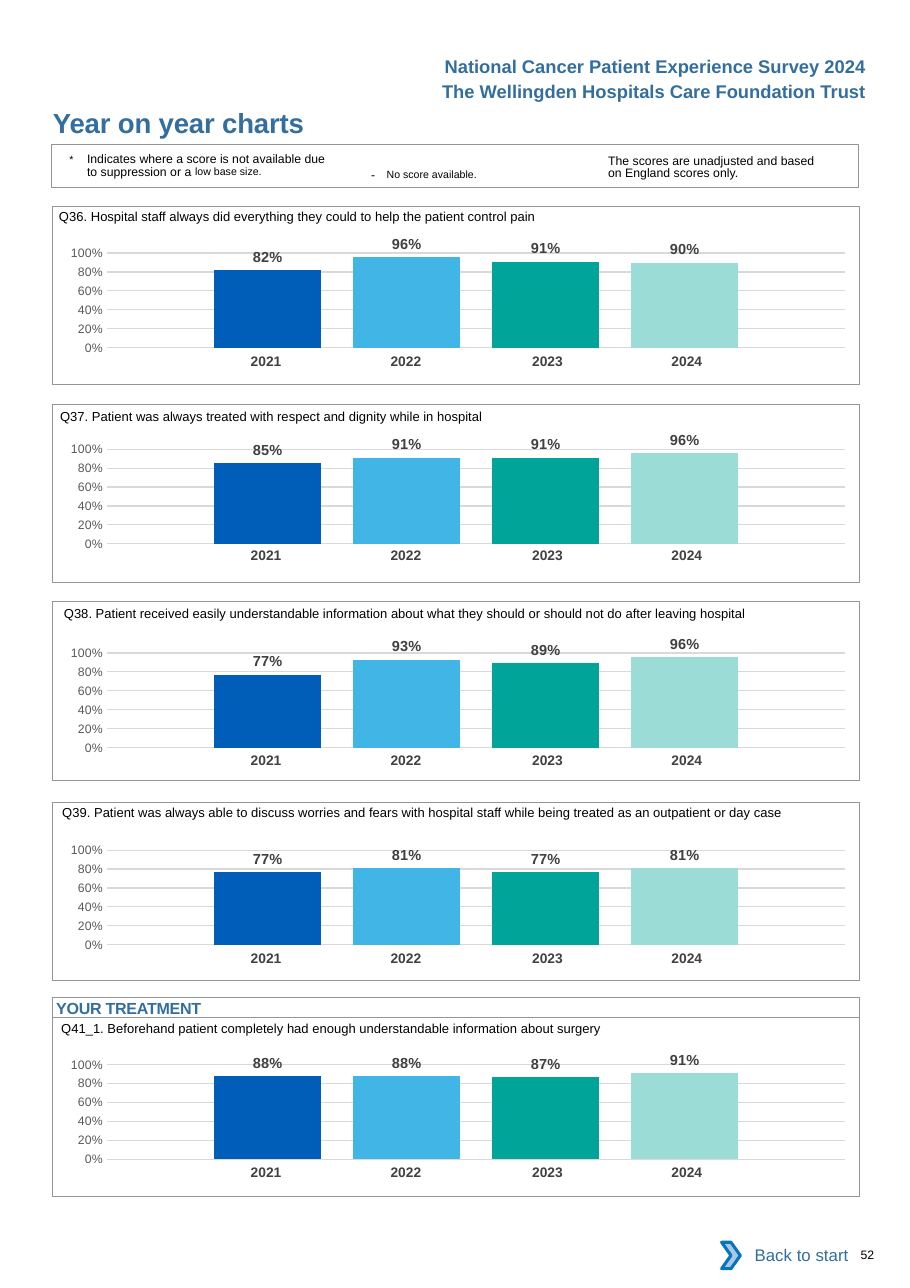
"""Build the year on year charts page of a patient survey report."""
from lxml import etree
from pptx import Presentation
from pptx import util as u
from pptx.chart.data import CategoryChartData
from pptx.dml.color import RGBColor
from pptx.enum import chart as charts, shapes, text
from pptx.oxml import parse_xml
from pptx.oxml.ns import nsdecls

WIDTH, HEIGHT = u.Inches(8.26), u.Inches(11.69)
COLOURS = {
    "heading": "336E9F", "ink": "000000", "frame": "939598", "year": "414042",
    "axis": "595959", "grid": "D9D9D9", "label": "404040", "paper": "FFFFFF",
    "chevron": "A8C7E9", "chevron_edge": "0A74BB",
}
YEARS = {"2021": "005EB8", "2022": "41B6E6", "2023": "00A499", "2024": "9CDCD7"}
YEAR_COLUMNS = (1.27, 1.27, 1.34, 1.27)
YEAR_RIGHT_INSETS = (0, 0, 0.04, 0.12)
PLOT = {"x": 0.08, "y": 0.145, "w": 0.915, "h": 0.666}
FRAME_LEFT, FRAME_WIDTH, FRAME_HEIGHT = 5.81, 88.62, 13.86
HEADING = {"size": 12, "bold": True, "colour": "heading"}
NOTE = {"size": 8}
RAISED = {"size": 12, "baseline": 3}
PANELS = (
    {"question": "Q36. Hospital staff always did everything they could to help the patient control pain",
     "indent": 6.48, "tops": (15.4, 16, 18.05, 27.03), "scores": (0.82, 0.96, 0.91, 0.9)},
    {"question": "Q37. Patient was always treated with respect and dignity while in hospital",
     "indent": 6.6, "tops": (30.95, 31.39, 33.28, 42.09), "scores": (0.85, 0.91, 0.91, 0.96)},
    {"question": "Q38. Patient received easily understandable information about what they should "
                 "or should not do after leaving hospital",
     "indent": 7.02, "tops": (46.25, 46.71, 49.1, 58.05), "scores": (0.77, 0.93, 0.89, 0.96)},
    {"question": "Q39. Patient was always able to discuss worries and fears with hospital staff "
                 "while being treated as an outpatient or day case",
     "indent": 6.84, "tops": (61.68, 62.28, 64.41, 73.4), "scores": (0.77, 0.81, 0.77, 0.81)},
    {"question": "Q41_1. Beforehand patient completely had enough understandable information about surgery",
     "indent": 6.72, "tops": (78.44, 79.0, 81.05, 90.04), "scores": (0.88, 0.88, 0.87, 0.91)},
)


def area(left, top, width, height):
    """Turn percentages of the page into lengths."""
    return [round(share * side / 100) for share, side in
            zip((left, top, width, height), (WIDTH, HEIGHT, WIDTH, HEIGHT))]


def colour(name):
    """Look up a named colour."""
    return RGBColor.from_string(COLOURS.get(name, name))


def apply(target, **values):
    """Set each named attribute on the target."""
    for name, value in values.items():
        setattr(target, name, value)


def style_font(font, size, name="ink", bold=False):
    """Give a font its face, size, weight and colour."""
    apply(font, name="Arial", size=u.Pt(size), bold=bold)
    font.color.rgb = colour(name)


def write(box, spans, insets=(0, 0, 0, 0), wrap=True, anchor="TOP", **layout):
    """Write formatted spans as the paragraph of a box."""
    frame = box.text_frame
    left, top, right, bottom = (u.Inches(inset) for inset in insets)
    apply(frame, margin_left=left, margin_top=top, margin_right=right, margin_bottom=bottom,
          word_wrap=wrap, vertical_anchor=getattr(text.MSO_ANCHOR, anchor))
    para = frame.paragraphs[0]
    apply(para, **layout)
    for words, look in spans:
        span = para.add_run()
        span.text = words
        style_font(span.font, look["size"], look.get("colour", "ink"), look.get("bold", False))
        properties = span._r.get_or_add_rPr()
        if "baseline" in look:
            properties.set("baseline", str(look["baseline"] * 1000))
        if "spacing" in look:
            properties.set("spc", str(round(look["spacing"] * 100)))
    return para


def add_text(page, place, spans, **layout):
    """Add a text box."""
    return write(page.shapes.add_textbox(*area(*place)), spans, **layout)


def add_block(page, place, kind="RECTANGLE", fill=None, line=None, weight=0.5):
    """Add a preset shape with an optional fill and outline."""
    block = page.shapes.add_shape(getattr(shapes.MSO_SHAPE, kind), *area(*place))
    block.shadow.inherit = False
    for paint, name in ((block.fill, fill), (block.line.fill, line)):
        if name:
            paint.solid()
            paint.fore_color.rgb = colour(name)
        else:
            paint.background()
    if line:
        block.line.width = u.Pt(weight)
    return block


def add_years(page, top):
    """Add the row of years below a chart."""
    table = page.shapes.add_table(1, len(YEARS), *area(20.94, top, 62.35, 2.31)).table
    apply(table, first_row=False, horz_banding=False)
    for index, year in enumerate(YEARS):
        table.columns[index].width = u.Inches(YEAR_COLUMNS[index])
        cell = table.cell(0, index)
        cell.fill.background()
        apply(cell, margin_left=u.Inches(0.1), margin_right=u.Inches(YEAR_RIGHT_INSETS[index]))
        para = cell.text_frame.paragraphs[0]
        para.alignment = text.PP_ALIGN.CENTER
        span = para.add_run()
        span.text = year
        style_font(span.font, 9, "year", True)


def fix_plot(chart):
    """Fix the inner plot area within the chart."""
    area_xml = chart._chartSpace.chart.plotArea
    for layout in area_xml.findall("{*}layout"):
        area_xml.remove(layout)
    root = parse_xml(f"<c:layout {nsdecls('c')}><c:manualLayout/></c:layout>")
    namespace = etree.QName(root).namespace
    settings = {"layoutTarget": "inner", "xMode": "edge", "yMode": "edge", **PLOT}
    for name, value in settings.items():
        etree.SubElement(root[0], f"{{{namespace}}}{name}").set("val", str(value))
    area_xml.insert(0, root)


def add_scores(page, top, scores):
    """Add a column chart of yearly scores."""
    data = CategoryChartData(number_format="0%")
    data.categories = ["1"]
    for number, score in enumerate(scores, 1):
        data.add_series(f"Series {number}", [score])
    chart = page.shapes.add_chart(charts.XL_CHART_TYPE.COLUMN_CLUSTERED,
                                  *area(4.72, top, FRAME_WIDTH, 11.04), data).chart
    apply(chart, has_title=False, has_legend=False)
    apply(chart.font, name="Calibri", size=u.Pt(10))
    chart.category_axis.visible = False
    axis = chart.value_axis
    apply(axis, minimum_scale=0, maximum_scale=1, major_unit=0.2,
          major_tick_mark=charts.XL_TICK_MARK.NONE)
    apply(axis.tick_labels, number_format="0%", number_format_is_linked=False)
    style_font(axis.tick_labels.font, 8, "axis")
    axis.format.line.fill.background()
    grid = axis.major_gridlines.format.line
    grid.color.rgb = colour("grid")
    grid.width = u.Pt(0.75)
    plot = chart.plots[0]
    apply(plot, gap_width=200, overlap=-30, vary_by_categories=False)
    for series, shade in zip(plot.series, YEARS.values()):
        series.format.fill.solid()
        series.format.fill.fore_color.rgb = colour(shade)
        labels = series.data_labels
        apply(labels, show_value=True, number_format="0%", number_format_is_linked=False,
              position=charts.XL_LABEL_POSITION.OUTSIDE_END)
        style_font(labels.font, 9.5, "label", True)
    fix_plot(chart)


def add_panel(page, question, indent, tops, scores):
    """Add a framed question with its chart and years."""
    question_top, frame_top, chart_top, years_top = tops
    add_years(page, years_top)
    add_scores(page, chart_top, scores)
    add_block(page, (FRAME_LEFT, frame_top, FRAME_WIDTH, FRAME_HEIGHT), line="frame")
    add_text(page, (indent, question_top, 87.17, 2.05), [(question, {"size": 8.5})],
             insets=(0, 0.09, 0, 0))


def add_notes(page):
    """Add the framed notes on how to read the scores."""
    add_block(page, (5.69, 11.21, FRAME_WIDTH, 3.34), line="frame", weight=0.75)
    lines = {"insets": (0, 0.03, 0, 0), "line_spacing": u.Pt(8.1), "space_before": u.Pt(2.5)}
    suppressed = add_text(page, (7.63, 11.8, 28.81, 2.31), [
        ("*\t", RAISED),
        ("Indicates where a score is not available due to suppression or a ", NOTE),
        ("low base size.", {"size": 12, "baseline": 7})], **lines)
    properties = suppressed._p.get_or_add_pPr()
    properties.set("marL", str(u.Inches(0.16)))
    properties.set("indent", str(-u.Inches(0.16)))
    add_text(page, (39.59, 12.06, 22.15, 2.05),
             [("- ", {"size": 8, "spacing": 2.6}), ("No score available.", RAISED)],
             insets=(0.1, 0.05, 0.1, 0.05), space_before=u.Pt(2.1))
    add_text(page, (66.83, 11.8, 24.33, 2.31),
             [("The scores are unadjusted and based on England scores only.", NOTE)], **lines)


def add_footer(page):
    """Add the return button and the page number."""
    button = add_block(page, (80.15, 95.65, 14.29, 3.59), fill="paper")
    write(button, [("Back to start", {"size": 11, "colour": "heading"})], anchor="MIDDLE",
          insets=(0.1, 0.05, 0.1, 0.05), alignment=text.PP_ALIGN.RIGHT)
    add_block(page, (79.3, 96.45, 2.06, 2.05), "CHEVRON", "chevron", "chevron_edge", 2)
    add_text(page, (94.57, 96.87, 4.84, 1.11), [("52", NOTE)])


def main():
    """Build and save the deck."""
    deck = Presentation()
    apply(deck, slide_width=WIDTH, slide_height=HEIGHT)
    page = deck.slides.add_slide(deck.slide_layouts[5])
    title = page.shapes.title
    apply(title, **dict(zip(("left", "top", "width", "height"), area(5.81, 8.21, 54.48, 2.57))))
    write(title, [("Year on year charts", {**HEADING, "size": 18, "spacing": -0.1})],
          alignment=text.PP_ALIGN.LEFT)
    for top, words in ((3.87, "National Cancer Patient Experience Survey 2024"),
                       (5.82, "The Wellingden Hospitals Care Foundation Trust")):
        add_text(page, (36.37, top, 60, 2.57), [(words, HEADING)],
                 insets=(0.1, 0.05, 0.1, 0.05), alignment=text.PP_ALIGN.RIGHT)
    add_notes(page)
    for panel in PANELS:
        add_panel(page, **panel)
    section = add_block(page, (FRAME_LEFT, 77.46, FRAME_WIDTH, 1.54), line="frame")
    write(section, [("YOUR TREATMENT", {**HEADING, "size": 10.5, "spacing": -0.15})],
          insets=(0.03, 0.01, 0, 0), alignment=text.PP_ALIGN.LEFT)
    add_footer(page)
    deck.save("out.pptx")


if __name__ == "__main__":
    main()
